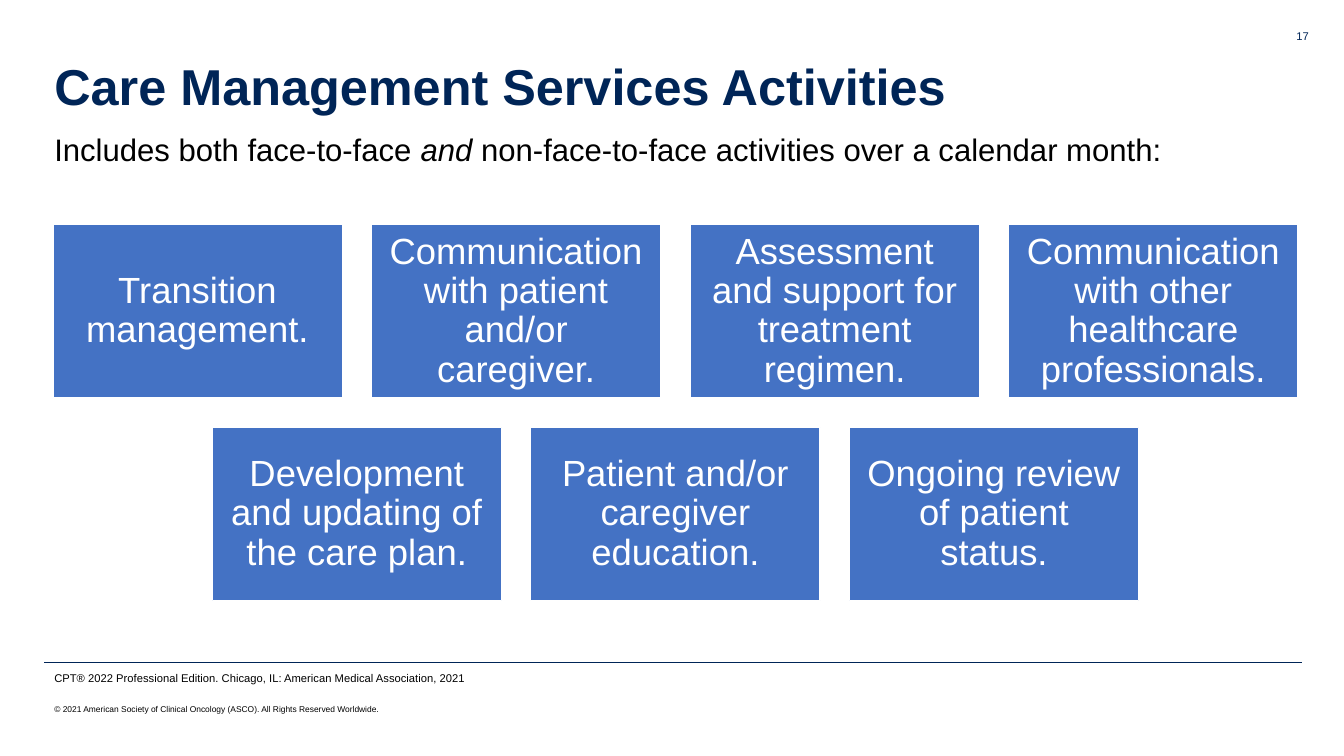
from lxml import etree
from pptx import Presentation
from pptx.dml.color import RGBColor
from pptx.enum import shapes, text
from pptx.oxml import ns
from pptx.util import Inches, Pt

NAVY = RGBColor(0x00, 0x25, 0x57)
BLUE = RGBColor(0x44, 0x72, 0xC4)
BLACK = RGBColor(0, 0, 0)
WHITE = RGBColor(255, 255, 255)

ROWS = [
    ["Transition management.",
     "Communication with patient and/or caregiver.",
     "Assessment and support for treatment regimen.",
     "Communication with other healthcare professionals."],
    ["Development and updating of the care plan.",
     "Patient and/or caregiver education.",
     "Ongoing review of patient status."],
]


class Deck:
    """Holds the text style and the current slide, and draws on it."""

    def __init__(self, slide, font="Arial"):
        self.shapes = slide.shapes
        self.font = font

    def fill_text(self, frame, runs, size, color, bold=False, align=text.PP_ALIGN.LEFT,
                  anchor=text.MSO_ANCHOR.TOP, space=None):
        frame.word_wrap = True
        frame.vertical_anchor = anchor
        para = frame.paragraphs[0]
        para.alignment = align
        if space:
            para.line_spacing = space
        for words, slant in runs:
            run = para.add_run()
            run.text = words
            font = run.font
            font.name, font.size = self.font, Pt(size)
            font.bold, font.italic = bold, slant
            font.color.rgb = color

    def label(self, at, runs, size, color=BLACK, **style):
        box = self.shapes.add_textbox(*map(Inches, at))
        self.fill_text(box.text_frame, runs, size, color, **style)

    def card(self, at, words):
        box = self.shapes.add_shape(shapes.MSO_SHAPE.RECTANGLE, *map(Inches, at))
        box.shadow.inherit = False
        box.fill.solid()
        box.fill.fore_color.rgb = BLUE
        box.line.color.rgb = WHITE
        box.line.width = Pt(1)
        frame = box.text_frame
        frame.margin_left = frame.margin_right = Inches(0.11)
        frame.margin_top = frame.margin_bottom = Inches(0.11)
        self.fill_text(frame, [(words, False)], 26, WHITE, align=text.PP_ALIGN.CENTER,
                       anchor=text.MSO_ANCHOR.MIDDLE, space=0.9)

    def cards(self, rows, mid, top, wide, high, gap):
        for i, row in enumerate(rows):
            left = mid - (len(row) * (wide + gap) - gap) / 2
            for j, words in enumerate(row):
                self.card((left + j * (wide + gap), top + i * (high + gap), wide, high), words)

    def rule(self, left, right, y, color, width):
        line = self.shapes.add_connector(
            shapes.MSO_CONNECTOR.STRAIGHT, Inches(left), Inches(y), Inches(right), Inches(y))
        line.line.color.rgb = color
        line.line.width = Pt(width)
        etree.SubElement(line._element.spPr, ns.qn("a:effectLst"))


def main():
    prs = Presentation()
    prs.slide_width, prs.slide_height = Inches(13.33), Inches(7.5)
    deck = Deck(prs.slides.add_slide(prs.slide_layouts[6]))
    middle = text.MSO_ANCHOR.MIDDLE

    deck.rule(0.44, 12.91, 6.57, NAVY, 0.25)
    deck.label((0.44, 0.4, 11.98, 0.97), [("Care Management Services Activities", False)],
               36, NAVY, bold=True, anchor=middle, space=0.9)
    deck.label((0.44, 1.24, 11.98, 0.63),
               [("Includes both face-to-face ", False), ("and", True),
                (" non-face-to-face activities over a calendar month:", False)], 22.2)
    deck.label((0.44, 6.84, 4.5, 0.4),
               [("© 2021 American Society of Clinical Oncology (ASCO). "
                 "All Rights Reserved Worldwide.", False)], 6, anchor=middle)
    deck.label((12.14, 0.24, 0.94, 0.4), [("17", False)], 8, NAVY, align=text.PP_ALIGN.RIGHT)
    deck.cards(ROWS, mid=6.7, top=2.23, wide=2.87, high=1.72, gap=0.29)
    deck.label((0.44, 6.61, 6.23, 0.24),
               [("CPT® 2022 Professional Edition. Chicago, IL: "
                 "American Medical Association, 2021", False)], 8)
    prs.save("out.pptx")


if __name__ == "__main__":
    main()
